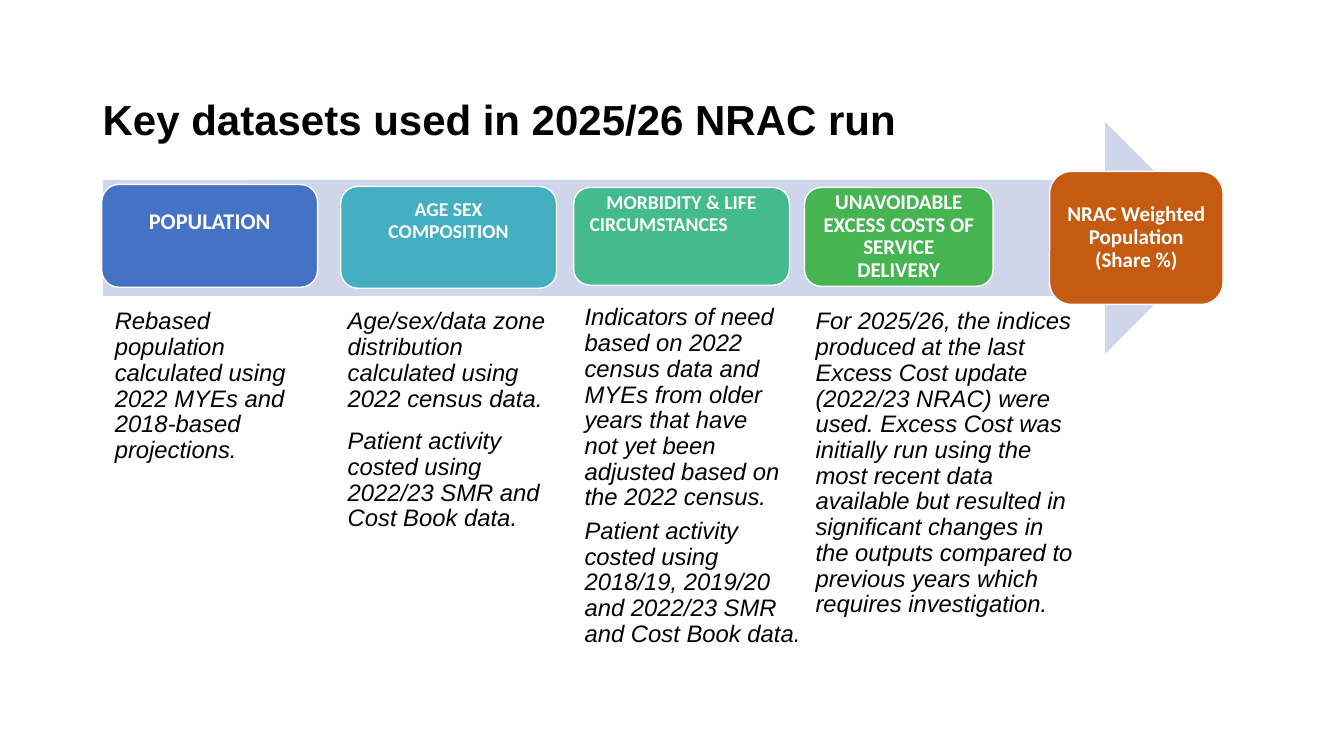
from dataclasses import dataclass

from pptx import Presentation
from pptx.dml.color import RGBColor
from pptx.enum.shapes import MSO_SHAPE
from pptx.enum.text import MSO_ANCHOR, PP_ALIGN
from pptx.util import Inches, Pt


@dataclass(frozen=True)
class Theme:
    heading_font: str = "Arial"
    label_font: str = "Calibri"
    text: str = "000000"
    white: str = "FFFFFF"
    arrow: str = "CFD5EA"
    population: str = "4472C4"
    age_sex: str = "43AFC0"
    morbidity: str = "43BB8D"
    excess_cost: str = "45B451"
    result: str = "C55A11"
    title_size: int = 30
    note_size: int = 17
    label_large: int = 16
    label_medium: int = 15
    label_small: int = 14
    line_spacing: float = 0.9


class SlideBuilder:
    def __init__(self, slide, theme):
        self.slide = slide
        self.theme = theme

    def _run(self, p, text, font, size, color, bold=False, italic=False):
        p.line_spacing = self.theme.line_spacing
        r = p.add_run()
        r.text = text
        r.font.name = font
        r.font.size = Pt(size)
        r.font.bold = bold
        r.font.italic = italic
        r.font.color.rgb = RGBColor.from_string(color)

    def _text_frame(self, left, top, width, height):
        box = self.slide.shapes.add_textbox(
            Inches(left), Inches(top), Inches(width), Inches(height))
        tf = box.text_frame
        tf.word_wrap = True
        return tf

    def _shape(self, kind, left, top, width, height, fill):
        sp = self.slide.shapes.add_shape(
            kind, Inches(left), Inches(top), Inches(width), Inches(height))
        sp.shadow.inherit = False
        sp.fill.solid()
        sp.fill.fore_color.rgb = RGBColor.from_string(fill)
        return sp

    def title(self, text, left, top, width, height):
        t = self.theme
        tf = self._text_frame(left, top, width, height)
        tf.vertical_anchor = MSO_ANCHOR.BOTTOM
        self._run(tf.paragraphs[0], text, t.heading_font, t.title_size, t.text, bold=True)

    def note(self, text, left, top, width, height):
        t = self.theme
        tf = self._text_frame(left, top, width, height)
        self._run(tf.paragraphs[0], text, t.heading_font, t.note_size, t.text, italic=True)

    def arrow(self, left, top, width, height):
        sp = self._shape(MSO_SHAPE.RIGHT_ARROW, left, top, width, height, self.theme.arrow)
        sp.line.fill.background()

    def step(self, lines, box, fill, size, lift=0.0, last_align=PP_ALIGN.CENTER):
        """Rounded box; lift raises its label above the middle."""
        t = self.theme
        sp = self._shape(MSO_SHAPE.ROUNDED_RECTANGLE, *box, fill)
        sp.line.color.rgb = RGBColor.from_string(t.white)
        sp.line.width = Pt(1)
        tf = sp.text_frame
        tf.word_wrap = True
        tf.vertical_anchor = MSO_ANCHOR.MIDDLE
        tf.margin_left = tf.margin_right = Inches(0.11)
        tf.margin_top = Inches(0.05)
        tf.margin_bottom = Inches(0.05 + 2 * lift)
        for i, line in enumerate(lines):
            p = tf.paragraphs[0] if i == 0 else tf.add_paragraph()
            p.alignment = PP_ALIGN.CENTER
            self._run(p, line, t.label_font, size, t.white, bold=True)
        p.alignment = last_align


def main():
    prs = Presentation()
    prs.slide_width, prs.slide_height = Inches(13.33), Inches(7.5)
    s = prs.slides.add_slide(prs.slide_layouts[6])
    theme = Theme()
    b = SlideBuilder(s, theme)

    # Title
    b.title("Key datasets used in 2025/26 NRAC run", 0.92, 0.5, 11.5, 0.98)

    # Arrow behind the steps
    b.arrow(1.02, 1.21, 11.09, 2.3)

    # Steps towards the weighted population
    b.step(["POPULATION"], (1.01, 1.83, 2.14, 1.02),
           theme.population, theme.label_large, lift=0.13)
    b.step(["AGE SEX", "COMPOSITION"], (3.38, 1.85, 2.14, 1.01),
           theme.age_sex, theme.label_small, lift=0.16)
    b.step(["MORBIDITY & LIFE", "CIRCUMSTANCES"], (5.69, 1.86, 2.14, 0.97),
           theme.morbidity, theme.label_small, lift=0.22, last_align=PP_ALIGN.LEFT)
    b.step(["UNAVOIDABLE", "EXCESS COSTS OF", "SERVICE DELIVERY"],
           (7.98, 1.86, 1.87, 0.98), theme.excess_cost, theme.label_medium)
    b.step(["NRAC Weighted", "Population", "(Share %)"],
           (10.41, 1.7, 1.72, 1.32), theme.result, theme.label_medium)

    # Datasets below each step
    notes = [
        ("Rebased population calculated using 2022 MYEs and 2018-based projections.",
         1.04, 3.02, 2.2, 1.79),
        ("Age/sex/data zone distribution calculated using 2022 census data.",
         3.35, 3.02, 2.2, 1.2),
        ("Patient activity costed using 2022/23 SMR and Cost Book data.",
         3.35, 4.21, 2.2, 1.13),
        ("Indicators of need based on 2022 census data and MYEs from older years "
         "that have not yet been adjusted based on the 2022 census.",
         5.7, 2.98, 2.2, 1.45),
        ("Patient activity costed using 2018/19, 2019/20 and 2022/23 SMR "
         "and Cost Book data.",
         5.7, 5.1, 2.36, 1.66),
        ("For 2025/26, the indices produced at the last Excess Cost update "
         "(2022/23 NRAC) were used. Excess Cost was initially run using the most "
         "recent data available but resulted in significant changes in the outputs "
         "compared to previous years which requires investigation.",
         7.99, 3.02, 2.79, 3.39),
    ]
    for note in notes:
        b.note(*note)

    prs.save("out.pptx")


if __name__ == "__main__":
    main()
